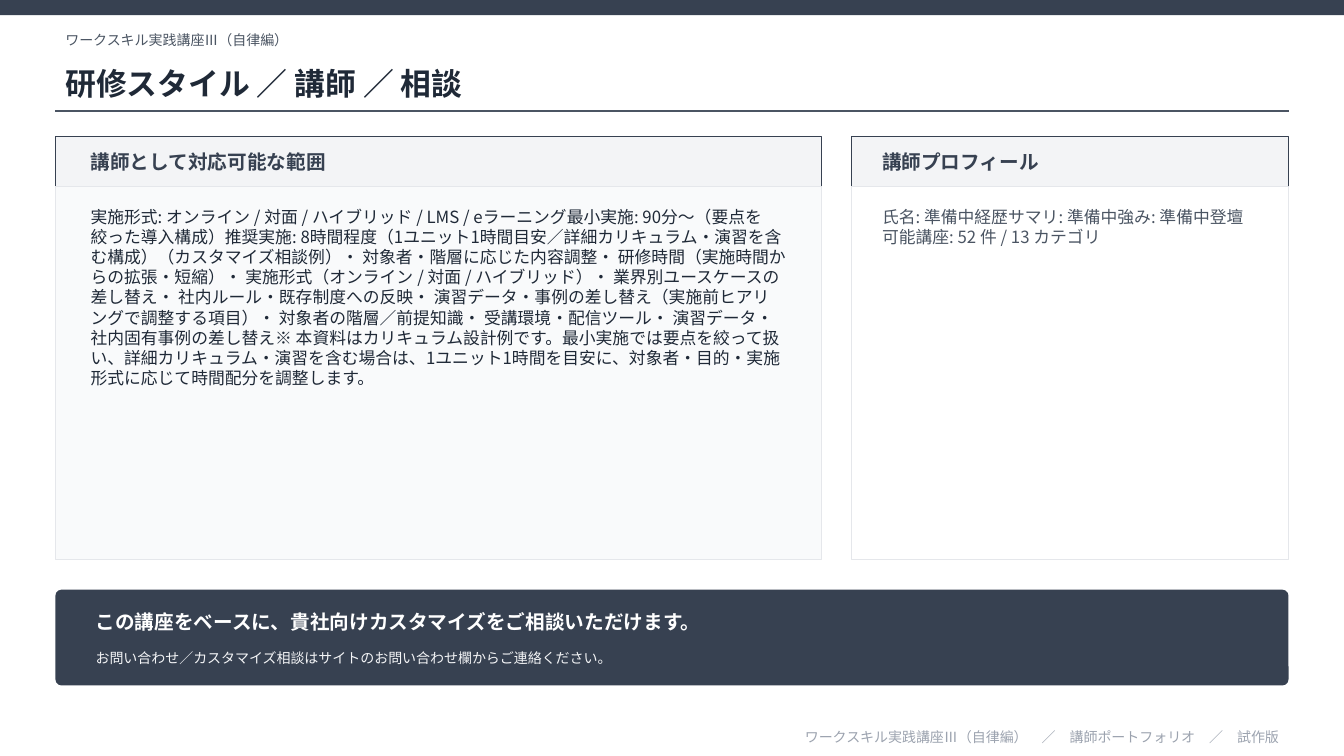
import pptx
import pptx.dml.color
import pptx.enum.shapes
import pptx.enum.text
import pptx.oxml
import pptx.oxml.ns
import pptx.util
from pptx.util import Inches

RGBColor = pptx.dml.color.RGBColor
SHAPE = pptx.enum.shapes.MSO_SHAPE
ANCHOR = pptx.enum.text.MSO_ANCHOR
ALIGN = pptx.enum.text.PP_ALIGN

FONT = "Noto Sans CJK JP"
SLATE = RGBColor(0x37, 0x41, 0x51)
INK = RGBColor(0x1F, 0x29, 0x37)
GRAY = RGBColor(0x4B, 0x55, 0x63)
MUTED = RGBColor(0x9C, 0xA3, 0xAF)
BORDER = RGBColor(0xE5, 0xE7, 0xEB)
PALE = RGBColor(0xF3, 0xF4, 0xF6)
MIST = RGBColor(0xF9, 0xFA, 0xFB)
WHITE = RGBColor(0xFF, 0xFF, 0xFF)

SLIDE_WIDTH = 13.33
MARGIN = 0.55
CONTENT_WIDTH = SLIDE_WIDTH - 2 * MARGIN
COURSE = "ワークスキル実践講座Ⅲ（自律編）"

SCOPE = (
    "実施形式: オンライン / 対面 / ハイブリッド / LMS / eラーニング"
    "最小実施: 90分〜（要点を絞った導入構成）"
    "推奨実施: 8時間程度（1ユニット1時間目安／詳細カリキュラム・演習を含む構成）"
    "（カスタマイズ相談例）"
    "・ 対象者・階層に応じた内容調整"
    "・ 研修時間（実施時間からの拡張・短縮）"
    "・ 実施形式（オンライン / 対面 / ハイブリッド）"
    "・ 業界別ユースケースの差し替え"
    "・ 社内ルール・既存制度への反映"
    "・ 演習データ・事例の差し替え"
    "（実施前ヒアリングで調整する項目）"
    "・ 対象者の階層／前提知識"
    "・ 受講環境・配信ツール"
    "・ 演習データ・社内固有事例の差し替え"
    "※ 本資料はカリキュラム設計例です。最小実施では要点を絞って扱い、"
    "詳細カリキュラム・演習を含む場合は、1ユニット1時間を目安に、"
    "対象者・目的・実施形式に応じて時間配分を調整します。"
)
PROFILE = (
    "氏名: 準備中経歴サマリ: 準備中強み: 準備中"
    "登壇可能講座: 52 件 / 13 カテゴリ"
)


def add_block(slide, box, fill, line=None, kind=SHAPE.RECTANGLE):
    shape = slide.shapes.add_shape(kind, *map(Inches, box))
    shape.shadow.inherit = False
    shape.fill.solid()
    shape.fill.fore_color.rgb = fill
    if line is None:
        shape.line.fill.background()
    else:
        shape.line.color.rgb = line
        shape.line.width = pptx.util.Pt(0.75)
    return shape


def add_text(slide, box, text, size, color, bold=None, align=None,
             anchor=ANCHOR.MIDDLE, space_after=None):
    frame = slide.shapes.add_textbox(*map(Inches, box)).text_frame
    frame.word_wrap = True
    frame.vertical_anchor = anchor
    paragraph = frame.paragraphs[0]
    paragraph.alignment = align
    if space_after is not None:
        paragraph.space_after = pptx.util.Pt(space_after)
    run = paragraph.add_run()
    run.text = text
    run.font.size = pptx.util.Pt(size)
    run.font.bold = bold
    run.font.color.rgb = color
    run.font.name = FONT
    east_asian = pptx.oxml.parse_xml(
        f'<a:ea {pptx.oxml.ns.nsdecls("a")} typeface="{FONT}"/>')
    run.font._element.append(east_asian)


def add_header(slide, left, top, width):
    add_block(slide, (0, 0, SLIDE_WIDTH, 0.15), SLATE)
    add_text(slide, (left, top, width, 0.3), COURSE, 10, GRAY)
    add_text(slide, (left, top + 0.3, width, 0.55),
             "研修スタイル ／ 講師 ／ 相談", 22, INK, bold=True)
    rule_top = Inches(top + 0.85)
    rule = slide.shapes.add_connector(
        pptx.enum.shapes.MSO_CONNECTOR.STRAIGHT,
        Inches(left), rule_top, Inches(left + width), rule_top)
    rule.line.color.rgb = GRAY
    rule.line.width = pptx.util.Pt(1)
    rule._element.spPr.append(
        pptx.oxml.parse_xml(f'<a:effectLst {pptx.oxml.ns.nsdecls("a")}/>'))


def add_panel(slide, box, inset, heading, body, fill, color, space_after):
    """Titled panel: a heading band above a body area."""
    left, top, width, height = box
    band = 0.5
    text_left, text_width = left + inset, width - 2 * inset
    add_block(slide, (left, top, width, band), PALE, SLATE)
    add_text(slide, (text_left, top, text_width, band), heading, 14, SLATE, bold=True)
    add_block(slide, (left, top + band, width, height - band), fill, BORDER)
    add_text(slide, (text_left, top + band + 0.15, text_width, height - band - 0.35),
             body, 12, color, anchor=ANCHOR.TOP, space_after=space_after)


def add_contact_banner(slide, left, top, width, height):
    banner = add_block(slide, (left, top, width, height), SLATE,
                       kind=SHAPE.ROUNDED_RECTANGLE)
    banner.adjustments[0] = 0.063
    text_left, text_width = left + 0.3, width - 0.6
    add_text(slide, (text_left, top + 0.12, text_width, 0.4),
             "この講座をベースに、貴社向けカスタマイズをご相談いただけます。",
             14, WHITE, bold=True)
    add_text(slide, (text_left, top + 0.5, text_width, 0.35),
             "お問い合わせ／カスタマイズ相談はサイトのお問い合わせ欄からご連絡ください。",
             10, PALE)


def add_footer(slide, left, top, width):
    add_text(slide, (left, top, width, 0.22),
             f"{COURSE}　／　講師ポートフォリオ　／　試作版", 10, MUTED, align=ALIGN.RIGHT)


def main():
    presentation = pptx.Presentation()
    presentation.slide_width = Inches(SLIDE_WIDTH)
    presentation.slide_height = Inches(7.5)
    slide = presentation.slides.add_slide(presentation.slide_layouts[6])
    scope_width, gap = 7.6, 0.3
    profile_left = MARGIN + scope_width + gap
    profile_width = CONTENT_WIDTH - scope_width - gap
    add_header(slide, MARGIN, 0.25, CONTENT_WIDTH)
    add_panel(slide, (MARGIN, 1.35, scope_width, 4.2), 0.25,
              "講師として対応可能な範囲", SCOPE, MIST, INK, 2)
    add_panel(slide, (profile_left, 1.35, profile_width, 4.2), 0.2,
              "講師プロフィール", PROFILE, WHITE, GRAY, 4)
    add_contact_banner(slide, MARGIN, 5.85, CONTENT_WIDTH, 0.95)
    add_footer(slide, MARGIN, 7.2, CONTENT_WIDTH)
    presentation.save("out.pptx")


if __name__ == "__main__":
    main()
